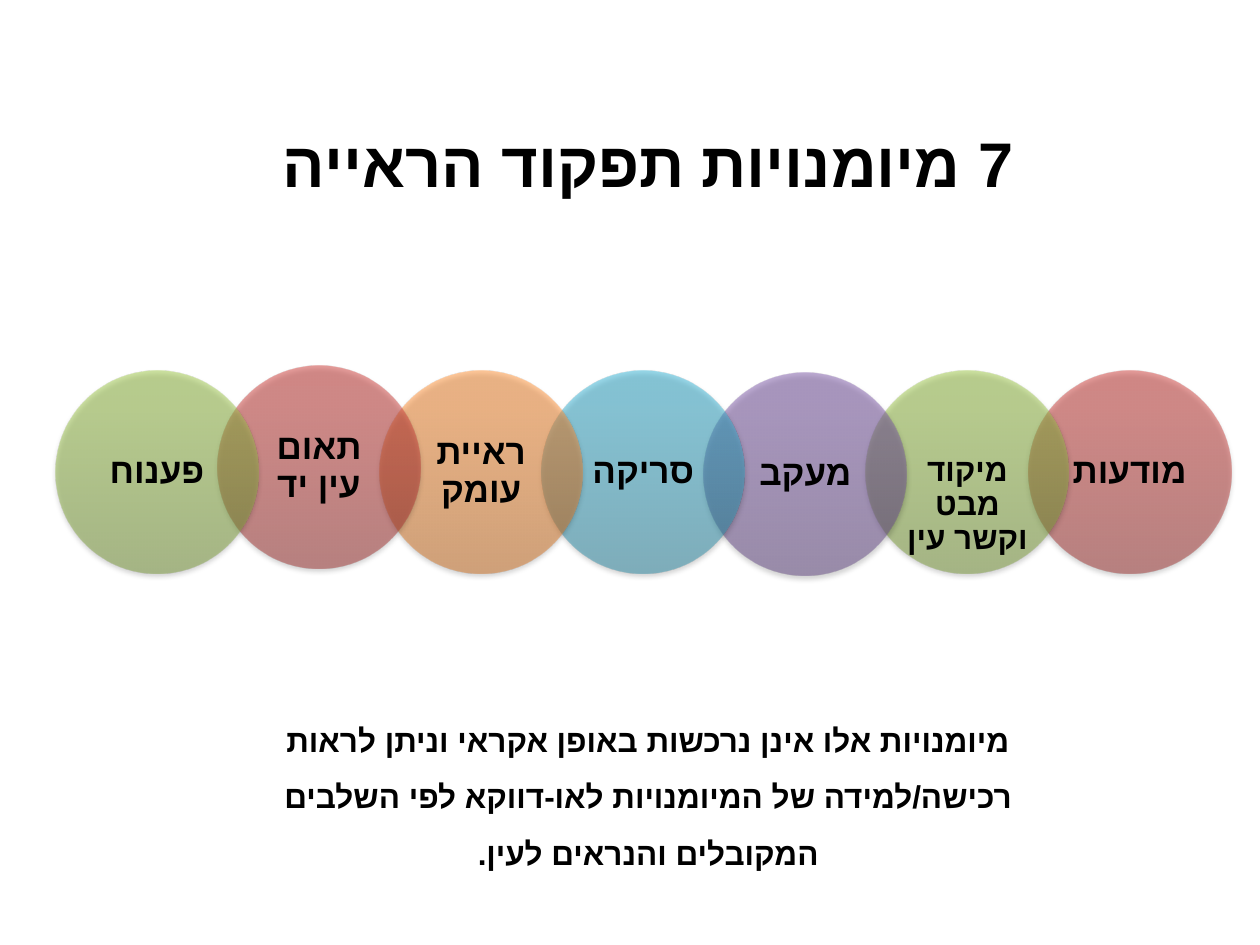
from dataclasses import dataclass

from lxml.etree import SubElement
from pptx import Presentation
from pptx.dml.color import RGBColor
from pptx.enum.shapes import MSO_SHAPE
from pptx.enum.text import MSO_ANCHOR, PP_ALIGN
from pptx.oxml.ns import qn
from pptx.util import Inches, Pt


@dataclass(frozen=True)
class Theme:
    ink: str = "000000"
    font: str = "Calibri"
    body_font: str = "Arial"
    hebrew_font: str = "Arial"
    title_size: int = 36
    label_size: int = 20
    small_size: int = 18
    # Gradient stops from the bottom of a circle to its top
    red: tuple = ("9C2F2D", "CB3E3A", "CE3B37")
    green: tuple = ("779737", "9BC348", "9DC746")
    purple: tuple = ("5F4480", "7B58A6", "7C57A8")
    teal: tuple = ("2A88A2", "37B1D2", "34B4D6")
    orange: tuple = ("CC6E20", "FF9034", "FF9136")


THEME = Theme()
DIAMETER = 1.61
LABEL_SIDE = 1.14

# Label, gradient, vertical shift, text size, extra space above the text
SKILLS = [
    ("מודעות", THEME.red, 0, THEME.label_size, 0),
    ("מיקוד מבט וקשר עין", THEME.green, 0, THEME.small_size, 0.53),
    ("מעקב", THEME.purple, 0.02, THEME.label_size, 0),
    ("סריקה", THEME.teal, 0, THEME.label_size, 0),
    ("ראיית עומק", THEME.orange, 0, THEME.label_size, 0),
    ("תאום עין יד", THEME.red, -0.04, THEME.label_size, 0),
    ("פענוח", THEME.green, 0, THEME.label_size, 0),
]


def write_text(box, text, *, size, font=THEME.font, line_spacing=None,
               anchor=MSO_ANCHOR.MIDDLE):
    """Fill a box with one bold, centred right-to-left paragraph."""
    frame = box.text_frame
    frame.word_wrap = True
    frame.vertical_anchor = anchor
    para = frame.paragraphs[0]
    para.alignment = PP_ALIGN.CENTER
    if line_spacing:
        para.line_spacing = line_spacing
    para._p.get_or_add_pPr().set("rtl", "1")
    span = para.add_run()
    span.text = text
    span.font.size = Pt(size)
    span.font.bold = True
    span.font.name = font
    span.font.color.rgb = RGBColor.from_string(THEME.ink)
    SubElement(span._r.get_or_add_rPr(), qn("a:cs"), typeface=THEME.hebrew_font)


def add_color(parent, color, opacity):
    node = SubElement(parent, qn("a:srgbClr"), val=color)
    SubElement(node, qn("a:alpha"), val=str(opacity * 1000))


def shade_circle(circle, colors):
    """Give a circle a half-transparent upward gradient and a soft shadow."""
    circle.fill.gradient()
    circle.fill.gradient_angle = 90
    circle.line.fill.background()
    circle.shadow.inherit = False
    properties = circle._element.spPr
    stops = properties.find(qn("a:gradFill")).find(qn("a:gsLst"))
    for stop in list(stops):
        stops.remove(stop)
    for position, color in zip((0, 80, 100), colors):
        add_color(SubElement(stops, qn("a:gs"), pos=str(position * 1000)), color, 50)
    shadow = SubElement(properties.find(qn("a:effectLst")), qn("a:outerShdw"),
                        blurRad=str(Pt(3.1)), dist=str(Pt(1.8)), dir="5400000",
                        rotWithShape="0")
    add_color(shadow, "000000", 35)


def add_title(page, left, top, width, height):
    title = page.shapes.title
    title.left, title.top = Inches(left), Inches(top)
    title.width, title.height = Inches(width), Inches(height)
    write_text(title, "7 מיומנויות תפקוד הראייה", size=THEME.title_size)


def add_skill_chain(page, left, top, width):
    """Place overlapping circles, the first skill at the right end."""
    group = page.shapes.add_group_shape()
    inset = (DIAMETER - LABEL_SIDE) / 2
    last = len(SKILLS) - 1
    step = (width - DIAMETER) / last
    for index, (text, colors, shift, size, space_above) in enumerate(SKILLS):
        x = left + step * (last - index)
        y = top + shift
        circle = group.shapes.add_shape(
            MSO_SHAPE.OVAL, Inches(x), Inches(y), Inches(DIAMETER), Inches(DIAMETER))
        shade_circle(circle, colors)
        label = group.shapes.add_textbox(
            Inches(x + inset), Inches(y + inset), Inches(LABEL_SIDE), Inches(LABEL_SIDE))
        frame = label.text_frame
        frame.margin_left = frame.margin_right = Inches(0.09)
        frame.margin_top = Inches(0.03 + space_above)
        frame.margin_bottom = Inches(0.03)
        write_text(label, text, size=size, line_spacing=0.9)


def add_note(page, left, top, width, height):
    note = page.shapes.add_textbox(
        Inches(left), Inches(top), Inches(width), Inches(height))
    write_text(
        note,
        "מיומנויות אלו אינן נרכשות באופן אקראי וניתן לראות רכישה/למידה של "
        "המיומנויות לאו-דווקא לפי השלבים המקובלים והנראים לעין.",
        size=THEME.small_size, font=THEME.body_font, line_spacing=1.5,
        anchor=MSO_ANCHOR.TOP)


def main():
    deck = Presentation()
    deck.slide_width, deck.slide_height = Inches(10), Inches(7.5)
    page = deck.slides.add_slide(deck.slide_layouts[5])
    add_title(page, 1, 1.07, 8.29, 0.44)
    add_skill_chain(page, 0.44, 2.94, 9.33)
    add_note(page, 1.65, 5.52, 6.99, 1.31)
    deck.save("out.pptx")


if __name__ == "__main__":
    main()
